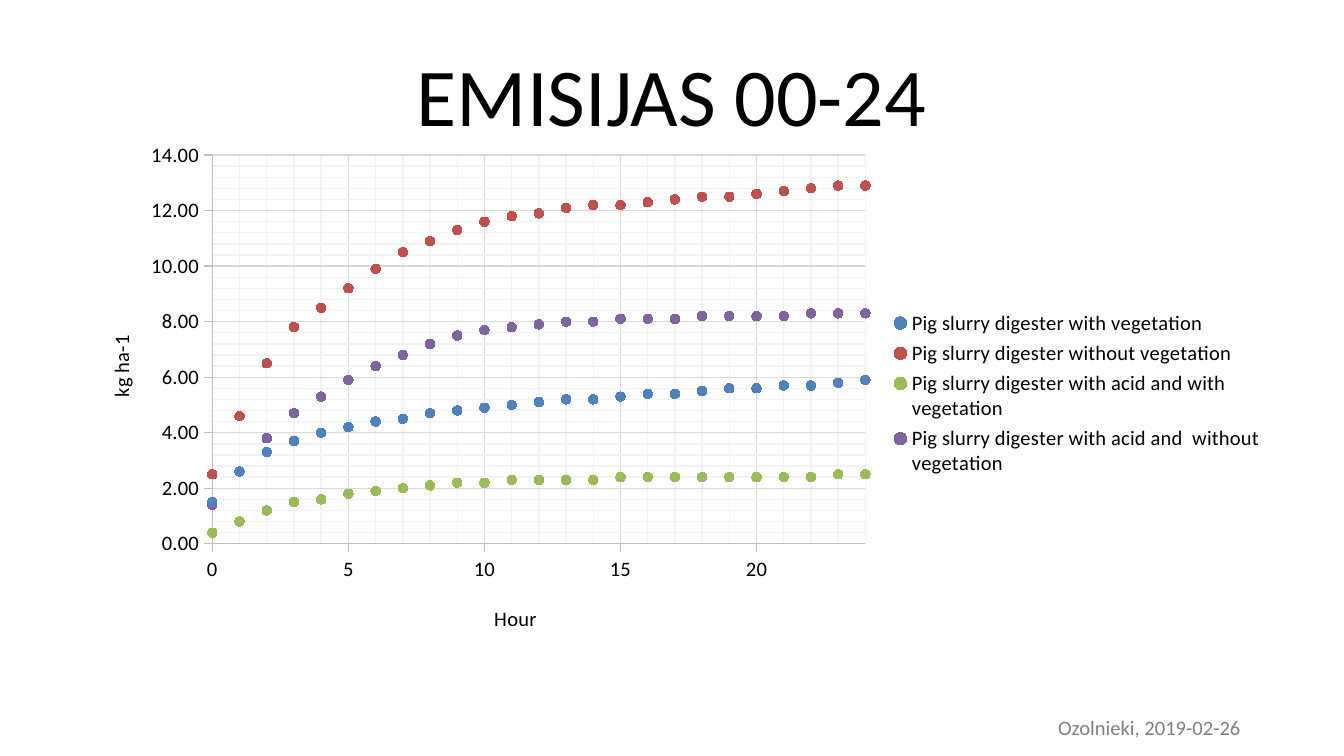
"""Build the slide with hourly emissions as a scatter chart."""
from lxml.etree import SubElement
from pptx import Presentation
from pptx.chart.data import XyChartData
from pptx.dml.color import RGBColor
from pptx.enum.chart import XL_CHART_TYPE as ChartType
from pptx.enum.chart import XL_LEGEND_POSITION as LegendPosition
from pptx.enum.chart import XL_MARKER_STYLE as MarkerStyle
from pptx.enum.chart import XL_TICK_MARK as TickMark
from pptx.enum.text import MSO_ANCHOR as Anchor
from pptx.enum.text import PP_ALIGN as Align
from pptx.oxml.ns import qn
from pptx.util import Cm, Pt

COLORS = {
    "text": "000000",
    "footer": "808080",
    "axis": "BFBFBF",
    "major": "D9D9D9",
    "minor": "F2F2F2",
    "blue": "4F81BD",
    "red": "C0504D",
    "green": "9BBB59",
    "purple": "8064A2",
}
FONT = "Calibri"
SERIES = [
    ("Pig slurry digester with vegetation", "blue",
     [1.5, 2.6, 3.3, 3.7, 4, 4.2, 4.4, 4.5, 4.7, 4.8, 4.9, 5, 5.1,
      5.2, 5.2, 5.3, 5.4, 5.4, 5.5, 5.6, 5.6, 5.7, 5.7, 5.8, 5.9]),
    ("Pig slurry digester without vegetation", "red",
     [2.5, 4.6, 6.5, 7.8, 8.5, 9.2, 9.9, 10.5, 10.9, 11.3, 11.6, 11.8, 11.9,
      12.1, 12.2, 12.2, 12.3, 12.4, 12.5, 12.5, 12.6, 12.7, 12.8, 12.9, 12.9]),
    ("Pig slurry digester with acid and with vegetation", "green",
     [0.4, 0.8, 1.2, 1.5, 1.6, 1.8, 1.9, 2, 2.1, 2.2, 2.2, 2.3, 2.3,
      2.3, 2.3, 2.4, 2.4, 2.4, 2.4, 2.4, 2.4, 2.4, 2.4, 2.5, 2.5]),
    ("Pig slurry digester with acid and  without vegetation", "purple",
     [1.4, 2.6, 3.8, 4.7, 5.3, 5.9, 6.4, 6.8, 7.2, 7.5, 7.7, 7.8, 7.9,
      8, 8, 8.1, 8.1, 8.1, 8.2, 8.2, 8.2, 8.2, 8.3, 8.3, 8.3]),
]


def set_attributes(target, values):
    """Set every attribute named in a dict of format values."""
    for name, value in values.items():
        setattr(target, name, value)


def rgb(name):
    """Return a named colour."""
    return RGBColor.from_string(COLORS[name])


def style_font(font, size=11, color="text"):
    """Apply the slide's regular typeface."""
    set_attributes(font, {"name": FONT, "size": Pt(size), "bold": False})
    font.color.rgb = rgb(color)


def style_line(line, color):
    """Give a line a colour and the common width."""
    line.color.rgb = rgb(color)
    line.width = Pt(0.75)


def add_text(slide, text, box, size, color, alignment):
    """Add a one-line text box, centred vertically."""
    shape = slide.shapes.add_textbox(*map(Cm, box))
    set_attributes(shape.text_frame,
                   {"word_wrap": True, "vertical_anchor": Anchor.MIDDLE})
    paragraph = shape.text_frame.paragraphs[0]
    set_attributes(paragraph, {"text": text, "alignment": alignment})
    style_font(paragraph.font, size, color)


def place(element, index, inner=False, **fractions):
    """Place a chart part by fractions of the chart area."""
    for old in element.findall(qn("c:layout")):
        element.remove(old)
    layout = element.makeelement(qn("c:layout"))
    element.insert(index, layout)
    manual = SubElement(layout, qn("c:manualLayout"))
    values = {"layoutTarget": "inner"} if inner else {}
    values.update({f"{key}Mode": "edge" for key in "xy"})
    values.update(fractions)
    for tag, value in values.items():
        SubElement(manual, qn(f"c:{tag}")).set("val", str(value))


def style_axis(axis, title, position, rotation, number_format, scale):
    """Format an axis with its grids, labels and title."""
    set_attributes(axis, {
        "has_major_gridlines": True,
        "has_minor_gridlines": True,
        "major_tick_mark": TickMark.OUTSIDE,
        "minor_tick_mark": TickMark.NONE,
        **scale,
    })
    style_line(axis.format.line, "axis")
    style_line(axis.major_gridlines.format.line, "major")
    minor = axis._element.find(qn("c:minorGridlines"))
    minor_line = SubElement(SubElement(minor, qn("c:spPr")), qn("a:ln"), w="9525")
    fill = SubElement(minor_line, qn("a:solidFill"))
    SubElement(fill, qn("a:srgbClr"), val=COLORS["minor"])
    set_attributes(axis.tick_labels, {"number_format": number_format,
                                      "number_format_is_linked": False})
    style_font(axis.tick_labels.font)
    paragraph = axis.axis_title.text_frame.paragraphs[0]
    paragraph.text = title
    style_font(paragraph.runs[0].font)
    element = axis.axis_title._element
    next(element.iter(qn("a:bodyPr"))).set("rot", str(rotation))
    place(element, 1, **position)


def add_scatter(slide, box):
    """Add the emissions chart."""
    data = XyChartData()
    for name, _, values in SERIES:
        series = data.add_series(name)
        for hour, value in enumerate(values):
            series.add_data_point(hour, value)
    chart = slide.shapes.add_chart(
        ChartType.XY_SCATTER, *map(Cm, box), data).chart
    set_attributes(chart, {"has_title": False, "has_legend": True})
    style_font(chart.font)
    chart.plots[0].vary_by_categories = False
    for series, (_, color, _) in zip(chart.plots[0].series, SERIES):
        series.format.line.fill.background()
        set_attributes(series.marker, {"style": MarkerStyle.CIRCLE, "size": 5})
        marker_format = series.marker.format
        marker_format.fill.solid()
        marker_format.fill.fore_color.rgb = rgb(color)
        style_line(marker_format.line, color)
    style_axis(chart.category_axis, "Hour", {"x": 0.35, "y": 0.9}, 0, "General",
               {"minimum_scale": 0, "maximum_scale": 24,
                "major_unit": 5, "minor_unit": 1})
    style_axis(chart.value_axis, "kg ha-1", {"x": 0.03, "y": 0.38}, -5400000,
               "0.00", {"minimum_scale": 0, "maximum_scale": 14,
                        "major_unit": 2, "minor_unit": 0.4})
    set_attributes(chart.legend, {"position": LegendPosition.RIGHT,
                                  "include_in_layout": False})
    style_font(chart.legend.font)
    place(chart.legend._element, 1, x=0.68, y=0.33, w=0.31, h=0.34)
    plot_area = chart._chartSpace.find(f".//{qn('c:plotArea')}")
    place(plot_area, 0, inner=True, x=0.12, y=0.04, w=0.54, h=0.75)


def main():
    """Build and save the presentation."""
    presentation = Presentation()
    set_attributes(presentation, {"slide_width": Cm(25.4),
                                  "slide_height": Cm(14.29)})
    slide = presentation.slides.add_slide(presentation.slide_layouts[6])
    add_text(slide, "Ozolnieki, 2019-02-26", (17.78, 13.36, 5.92, 0.76),
             11, "footer", Align.RIGHT)
    add_text(slide, "EMISIJAS 00-24", (1.27, 0.58, 22.86, 2.39),
             44, "text", Align.CENTER)
    add_scatter(slide, (1.27, 2.54, 22.86, 9.8))
    presentation.save("out.pptx")


if __name__ == "__main__":
    main()
